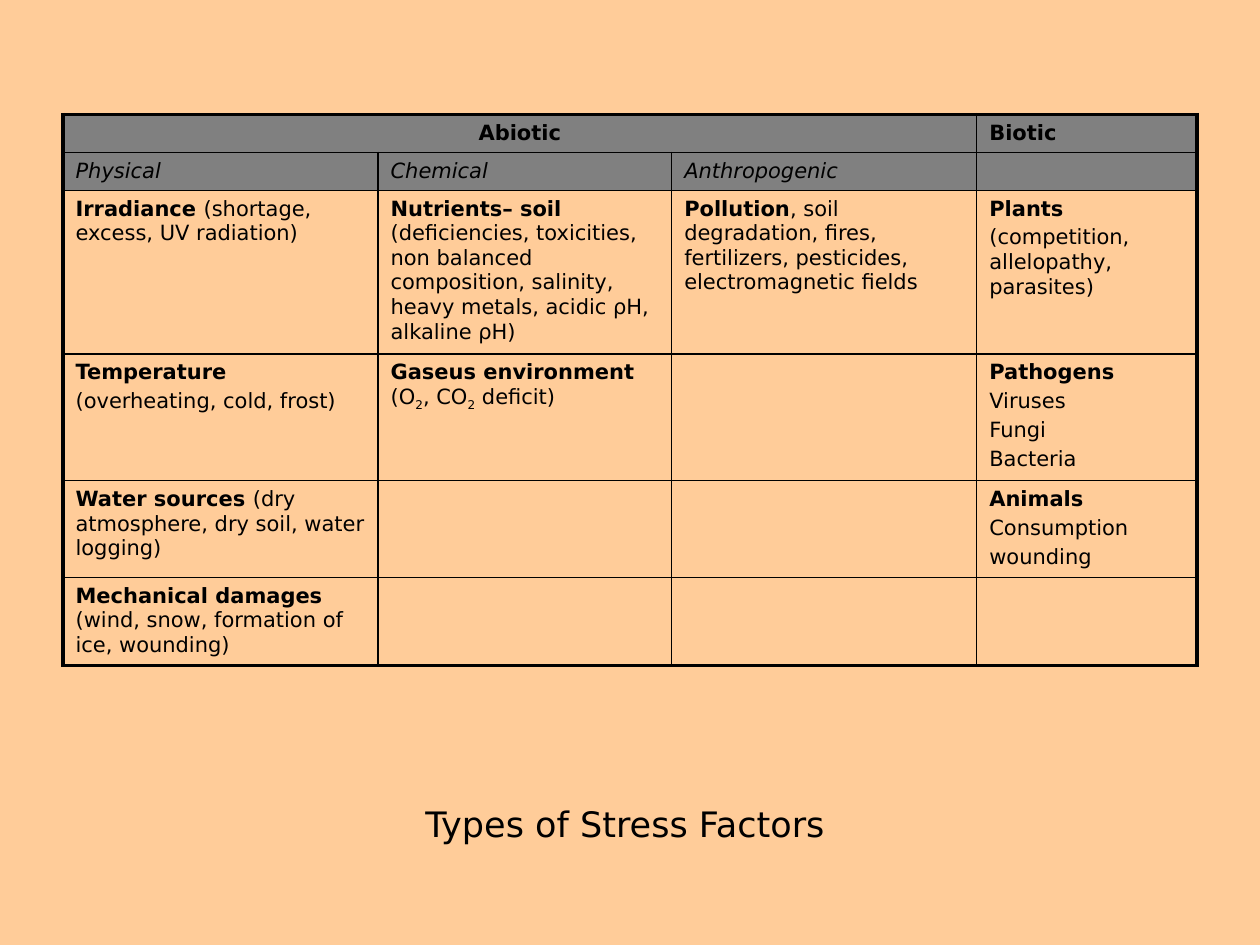
from dataclasses import dataclass
from typing import NamedTuple

from lxml.etree import SubElement
from pptx import Presentation
from pptx.dml.color import RGBColor
from pptx.enum.text import PP_ALIGN
from pptx.oxml.ns import qn
from pptx.util import Cm, Pt


@dataclass(frozen=True)
class Theme:
    """Colours, type sizes and line widths of the slide."""
    back: RGBColor = RGBColor.from_string("FFCC99")
    head: RGBColor = RGBColor.from_string("808080")
    ink: RGBColor = RGBColor.from_string("000000")
    font: str = "DejaVu Sans"
    title: Pt = Pt(20)
    body: Pt = Pt(12)
    gap: Pt = Pt(2.4)
    thick: Pt = Pt(2.25)
    thin: Pt = Pt(1)


class Part(NamedTuple):
    """A stretch of text with one style."""
    text: str
    bold: bool = False
    slant: bool = False
    base: int = 0


THEME = Theme()
NO_STYLE = "{2D5ABB26-0587-4C30-8999-92F81FD0307C}"
WIDTHS = (6.35, 5.92, 6.15, 4.44)
HEIGHTS = (0.76, 0.76, 3.29, 2.55, 1.95, 1.77)
HEADS = 2


def bold(text: str) -> Part:
    """Return a bold part."""
    return Part(text, bold=True)


def slant(text: str) -> list:
    """Return the paragraphs of an italic subheading."""
    return [[Part(text, slant=True)]]


def topic(name: str, rest: str) -> list:
    """Return one paragraph with a bold name and plain details."""
    return [[bold(name), Part(rest)]]


def stack(name: str, *lines: str) -> list:
    """Return a bold name with plain paragraphs below it."""
    return [[bold(name)], *([Part(line)] for line in lines)]


SUB = Part("2", base=-25000)
GASES = [[bold("Gaseus environment "), Part("(O"), SUB, Part(", CO"), SUB, Part(" deficit)")]]
ROWS = (
    (stack("Abiotic"), [], [], stack("Biotic")),
    (slant("Physical"), slant("Chemical"), slant("Anthropogenic"), []),
    (
        topic("Irradiance ", "(shortage, excess, UV radiation)"),
        topic("Nutrients– soil ", "(deficiencies, toxicities, non balanced composition, "
              "salinity, heavy metals, acidic ρΗ, alkaline ρΗ)"),
        topic("Pollution", ", soil degradation, fires, fertilizers, pesticides, "
              "electromagnetic fields"),
        stack("Plants", "(competition, allelopathy, parasites)"),
    ),
    (
        stack("Temperature", "(overheating, cold, frost)"),
        GASES,
        [],
        stack("Pathogens", "Viruses", "Fungi", "Bacteria"),
    ),
    (
        topic("Water sources ", "(dry atmosphere, dry soil, water logging)"),
        [],
        [],
        stack("Animals", "Consumption", "wounding"),
    ),
    (topic("Mechanical damages ", "(wind, snow, formation of ice, wounding)"), [], [], []),
)


def style(run, size: Pt, part: Part) -> None:
    """Format a run to match its part."""
    font = run.font
    font.name, font.size = THEME.font, size
    font.bold, font.italic = part.bold, part.slant
    font.color.rgb = THEME.ink
    if part.base:
        font._element.set("baseline", str(part.base))


def write(frame, lines: list) -> None:
    """Write paragraphs of styled parts into a cell."""
    if not lines:
        end = SubElement(frame.paragraphs[0]._p, qn("a:endParaRPr"))
        end.set("sz", str(int(THEME.body.pt * 100)))
        SubElement(end, qn("a:latin")).set("typeface", THEME.font)
    for i, line in enumerate(lines):
        para = frame.add_paragraph() if i else frame.paragraphs[0]
        para.space_before = THEME.gap
        for part in line:
            run = para.add_run()
            run.text = part.text
            style(run, THEME.body, part)


def border(cell, row: int, col: int) -> None:
    """Draw thick lines on the table's edge and thin lines inside."""
    edges = {
        "L": col == 0,
        "R": col == len(WIDTHS) - 1,
        "T": row == 0,
        "B": row == len(HEIGHTS) - 1,
    }
    props = cell._tc.get_or_add_tcPr()
    for side, outer in edges.items():
        line = SubElement(props, qn(f"a:ln{side}"))
        line.set("w", str(int(THEME.thick if outer else THEME.thin)))
        fill = SubElement(line, qn("a:solidFill"))
        SubElement(fill, qn("a:srgbClr")).set("val", str(THEME.ink))


def draw_grid(slide) -> None:
    """Add the table of stress factors."""
    frame = slide.shapes.add_table(
        len(HEIGHTS), len(WIDTHS), Cm(1.27), Cm(2.31), Cm(sum(WIDTHS)), Cm(sum(HEIGHTS)))
    table = frame.table
    table.first_row = table.horz_banding = False
    table._tbl.tblPr.find(qn("a:tableStyleId")).text = NO_STYLE
    for col, width in zip(table.columns, WIDTHS):
        col.width = Cm(width)
    for row, height in zip(table.rows, HEIGHTS):
        row.height = Cm(height)
    for r, row in enumerate(ROWS):
        for c, lines in enumerate(row):
            cell = table.cell(r, c)
            border(cell, r, c)
            if r < HEADS:
                cell.fill.solid()
                cell.fill.fore_color.rgb = THEME.head
            else:
                cell.fill.background()
            write(cell.text_frame, lines)
    first = table.cell(0, 0)
    first.merge(table.cell(0, 2))
    first.text_frame.paragraphs[0].alignment = PP_ALIGN.CENTER


def draw_title(slide) -> None:
    """Add the title below the table."""
    box = slide.shapes.add_textbox(Cm(1.27), Cm(16.05), Cm(22.66), Cm(1.09))
    frame = box.text_frame
    frame.word_wrap = True
    part = Part("Types of Stress Factors")
    frame.text = part.text
    para = frame.paragraphs[0]
    para.alignment = PP_ALIGN.CENTER
    style(para.runs[0], THEME.title, part)


def main() -> None:
    """Build and save the slide."""
    deck = Presentation()
    deck.slide_width, deck.slide_height = Cm(25.4), Cm(19.05)
    slide = deck.slides.add_slide(deck.slide_layouts[6])
    fill = slide.background.fill
    fill.solid()
    fill.fore_color.rgb = THEME.back
    draw_title(slide)
    draw_grid(slide)
    deck.save("out.pptx")


if __name__ == "__main__":
    main()
